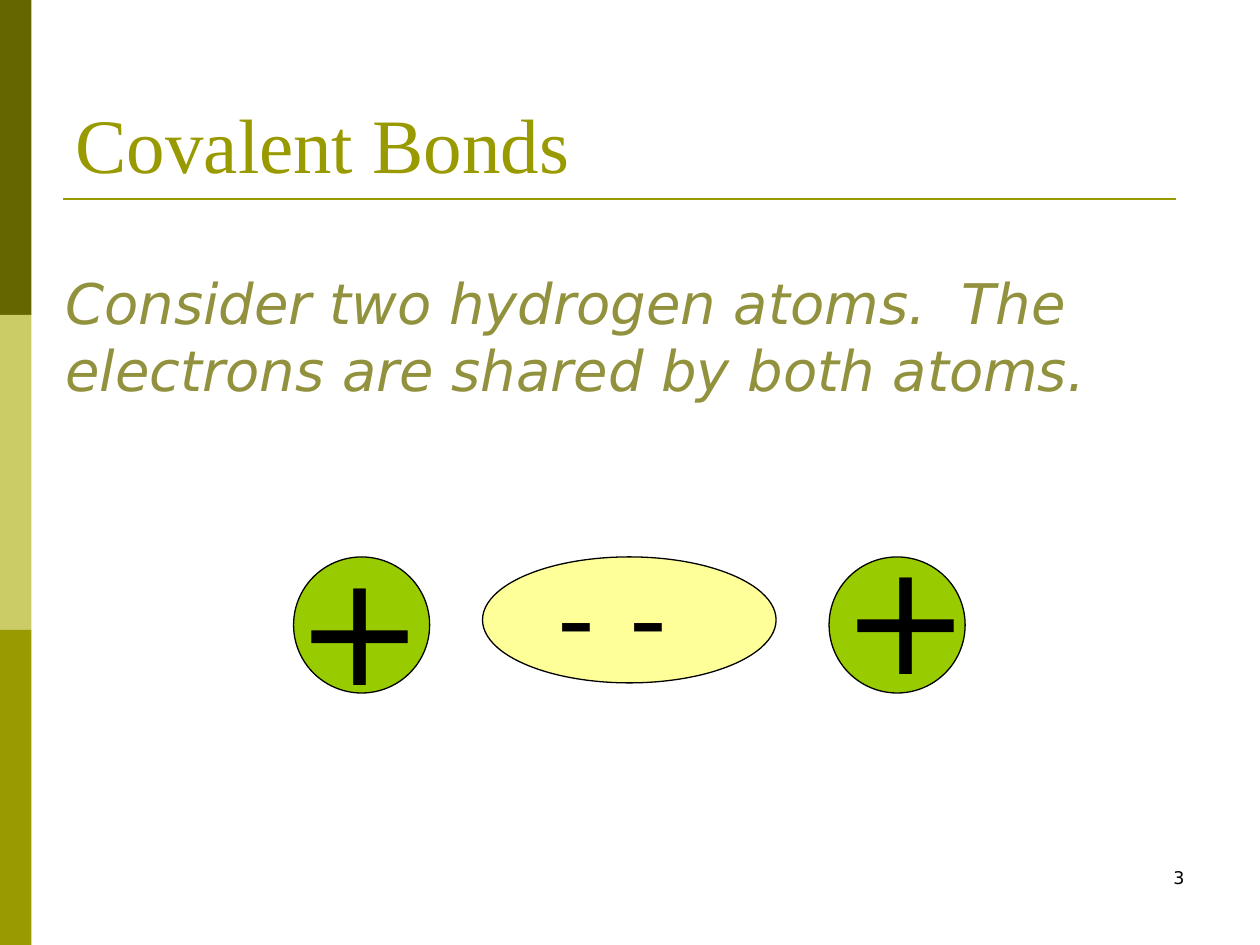
import pptx
import pptx.util
import pptx.dml.color
import pptx.enum.shapes
import pptx.enum.text
from lxml import etree

Inches, Pt = pptx.util.Inches, pptx.util.Pt
SHAPE = pptx.enum.shapes.MSO_SHAPE
ALIGN = pptx.enum.text.PP_ALIGN
ANCHOR = pptx.enum.text.MSO_ANCHOR

# Content
TITLE = "Covalent Bonds"
BODY = "Consider two hydrogen atoms.  The electrons are shared by both atoms."
COLORS = {
    "dark": "666600", "light": "CCCC66", "olive": "999900", "body": "91913E",
    "nucleus": "99CC00", "cloud": "FFFF99", "black": "000000",
}
SANS, SERIF = "DejaVu Sans", "Times New Roman"
W, H = 10, 7.5
BAND_COLORS = ["dark", "light", "olive"]
ATOM_TOP, ATOM_SIZE = 4.42, 1.08
# left, width, height, fill
ATOMS = [
    (2.33, ATOM_SIZE, ATOM_SIZE, "nucleus"),
    (6.58, ATOM_SIZE, ATOM_SIZE, "nucleus"),
    (3.83, 2.33, 1, "cloud"),
]
# text, box, size, colour, italic, alignment
LABELS = [
    ("3", (7.17, 6.83, 2.33, 0.5), 10, "black", False, ALIGN.RIGHT),
    ("+", (2.25, 4.17, 1.75, 1.57), 88, "black", False, ALIGN.LEFT),
    ("+", (6.58, 4.08, 1.75, 1.57), 88, "black", False, ALIGN.LEFT),
    ("- -", (4.33, 4.33, 2.08, 1.1), 60, "black", False, ALIGN.LEFT),
    (BODY, (0.42, 2.08, 8.5, 1.18), 32, "body", True, ALIGN.LEFT),
]


def rgb(name):
    return pptx.dml.color.RGBColor.from_string(COLORS[name])


def add_figure(s, kind, box, fill, line=None):
    sp = s.shapes.add_shape(kind, *map(Inches, box))
    sp.shadow.inherit = False
    sp.fill.solid()
    sp.fill.fore_color.rgb = rgb(fill)
    if line:
        sp.line.color.rgb = rgb(line)
        sp.line.width = Pt(0.75)
    else:
        sp.line.fill.background()


def write(tf, text, font, size, color, italic=False, align=ALIGN.LEFT):
    tf.word_wrap = True
    p = tf.paragraphs[0]
    p.alignment = align
    r = p.add_run()
    r.text = text
    r.font.name, r.font.size, r.font.italic = font, Pt(size), italic
    r.font.color.rgb = rgb(color)


prs = pptx.Presentation()
prs.slide_width, prs.slide_height = Inches(W), Inches(H)
s = prs.slides.add_slide(prs.slide_layouts[5])

# Side bands
band_h = H / len(BAND_COLORS)
for i, color in enumerate(BAND_COLORS):
    add_figure(s, SHAPE.RECTANGLE, (0, i * band_h, W / 40, band_h), color)

# Title and its rule
title = s.shapes.title
title.left, title.top, title.width, title.height = map(Inches, (0.5, 0.3, 9, 1.25))
title.text_frame.vertical_anchor = ANCHOR.BOTTOM
write(title.text_frame, TITLE, SERIF, 44, "olive")

rule = s.shapes.add_connector(
    pptx.enum.shapes.MSO_CONNECTOR.STRAIGHT, *map(Inches, (0.5, 1.58, 9.33, 1.58)))
rule.line.color.rgb = rgb("olive")
rule.line.width = Pt(1.5)
etree.SubElement(rule.element.spPr, pptx.oxml.ns.qn("a:effectLst"))

# Nuclei and the shared electron cloud
for left, width, height, fill in ATOMS:
    add_figure(s, SHAPE.OVAL, (left, ATOM_TOP, width, height), fill, "black")

# Charges, body text and slide number
for text, box, size, color, italic, align in LABELS:
    tf = s.shapes.add_textbox(*map(Inches, box)).text_frame
    write(tf, text, SANS, size, color, italic, align)

prs.save("out.pptx")
